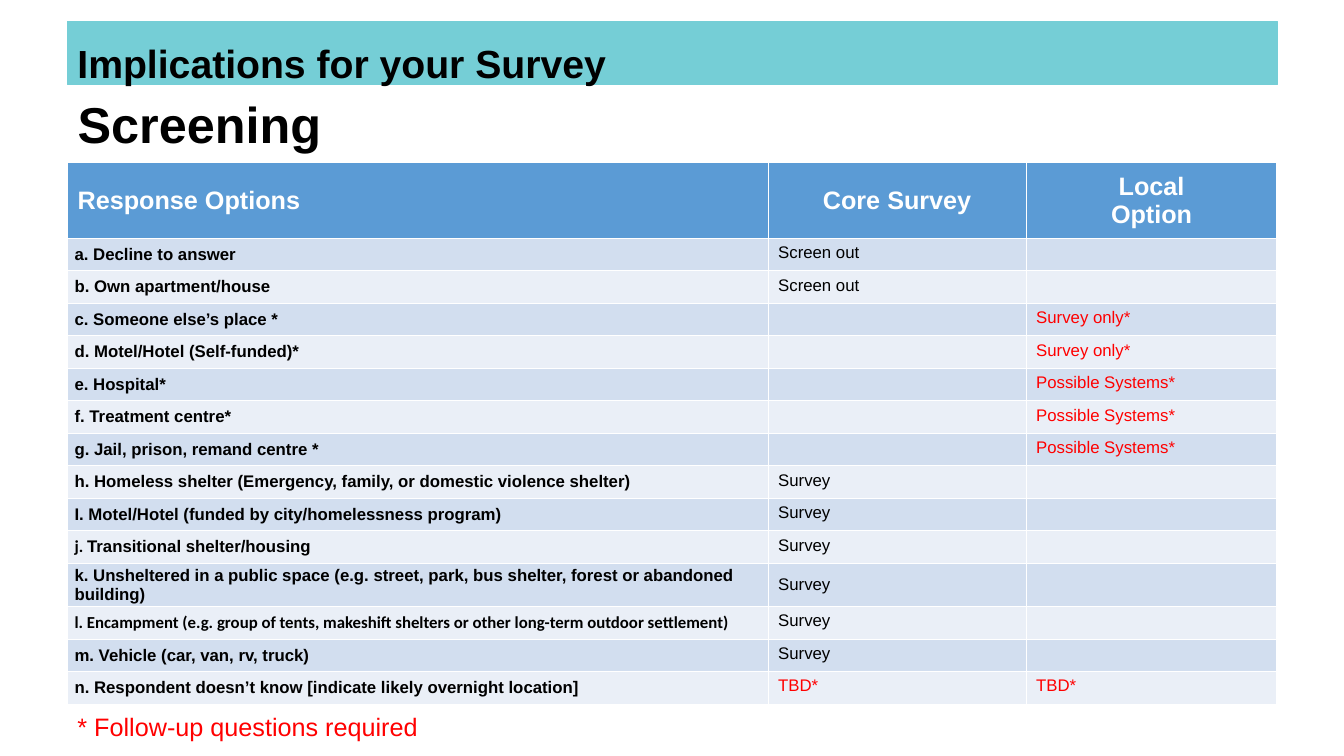
"""Build the survey screening slide with its table of response options."""
from typing import NamedTuple

import pptx
import pptx.dml.color
import pptx.enum.shapes
import pptx.enum.text
import pptx.util
from lxml import etree

Pt = pptx.util.Pt
RGBColor = pptx.dml.color.RGBColor
ALIGN = pptx.enum.text.PP_ALIGN
ANCHOR = pptx.enum.text.MSO_ANCHOR

BLACK = RGBColor(0x00, 0x00, 0x00)
WHITE = RGBColor(0xFF, 0xFF, 0xFF)
RED = RGBColor(0xFF, 0x00, 0x00)
TEAL = RGBColor(0x75, 0xCE, 0xD6)
HEADER_BLUE = RGBColor(0x5B, 0x9B, 0xD5)
BANDS = (RGBColor(0xD2, 0xDE, 0xEF), RGBColor(0xEA, 0xEF, 0xF7))

LEFT, WIDTH = 48.24, 864
COLUMN_WIDTHS = (500.4, 184.32, 179.28)
HEADER_HEIGHT, ROW_HEIGHT, TALL_HEIGHT = 54, 23.22, 31
DRAWING_NS = "http://schemas.openxmlformats.org/drawingml/2006/main"


class Response(NamedTuple):
    label: str
    core: str = ""
    local: str = ""
    lead: str = ""
    tall: bool = False


RESPONSES = (
    Response("a. Decline to answer", "Screen out"),
    Response("b. Own apartment/house", "Screen out"),
    Response("c. Someone else’s place *", local="Survey only*"),
    Response("d. Motel/Hotel (Self-funded)*", local="Survey only*"),
    Response("e. Hospital*", local="Possible Systems*"),
    Response("f. Treatment centre*", local="Possible Systems*"),
    Response("g. Jail, prison, remand centre *", local="Possible Systems*"),
    Response("h. Homeless shelter (Emergency, family, or domestic violence shelter)", "Survey"),
    Response("I. Motel/Hotel (funded by city/homelessness program)", "Survey"),
    Response("Transitional shelter/housing", "Survey", lead="j. "),
    Response("k. Unsheltered in a public space (e.g. street, park, bus shelter, "
             "forest or abandoned building)", "Survey", tall=True),
    Response("", "Survey", lead="l. Encampment (e.g. group of tents, makeshift shelters "
             "or other long-term outdoor settlement)"),
    Response("m. Vehicle (car, van, rv, truck)", "Survey"),
    Response("n. Respondent doesn’t know [indicate likely overnight location]", "TBD*", "TBD*"),
)


def add_text(p, text: str, *, size: float = 12, color: RGBColor = BLACK,
             bold: bool = False, font: str = "Arial", align=ALIGN.LEFT) -> None:
    """Append a formatted run, or size the paragraph when there is no text."""
    p.alignment = align
    if not text:
        end = etree.SubElement(p._p, f"{{{DRAWING_NS}}}endParaRPr")
        end.set("sz", str(int(size * 100)))
        return
    r = p.add_run()
    r.text = text
    r.font.size = Pt(size)
    r.font.name = font
    r.font.bold = bold
    r.font.color.rgb = color


def fill_cell(cell, color: RGBColor, anchor=ANCHOR.TOP) -> None:
    """Give a table cell its fill and vertical anchor."""
    cell.fill.solid()
    cell.fill.fore_color.rgb = color
    cell.vertical_anchor = anchor


def add_title(slide) -> None:
    """Place the slide title."""
    sp = slide.shapes.title
    sp.left, sp.top, sp.width, sp.height = Pt(LEFT), Pt(60.48), Pt(756), Pt(55.44)
    tf = sp.text_frame
    tf.auto_size = pptx.enum.text.MSO_AUTO_SIZE.NONE
    tf.vertical_anchor = ANCHOR.MIDDLE
    add_text(tf.paragraphs[0], "Screening", size=36, bold=True)


def add_header(table) -> None:
    """Write the column headings."""
    headings = (("Response Options",), ("Core Survey",), ("Local", "Option"))
    for i, lines in enumerate(headings):
        cell = table.cell(0, i)
        fill_cell(cell, HEADER_BLUE, ANCHOR.MIDDLE)
        tf = cell.text_frame
        for j, line in enumerate(lines):
            p = tf.add_paragraph() if j else tf.paragraphs[0]
            add_text(p, line, size=18, color=WHITE, bold=True,
                     align=ALIGN.CENTER if i else ALIGN.LEFT)


def add_response(table, row: int, response: Response) -> None:
    """Write one response option and its outcomes."""
    band = BANDS[(row - 1) % 2]
    table.rows[row].height = Pt(TALL_HEIGHT if response.tall else ROW_HEIGHT)
    cell = table.cell(row, 0)
    fill_cell(cell, band, ANCHOR.MIDDLE)
    cell.margin_left = cell.margin_right = Pt(5)
    cell.margin_top = cell.margin_bottom = Pt(0)
    p = cell.text_frame.paragraphs[0]
    for text, font in ((response.lead, "Calibri"), (response.label, "Arial")):
        if text:
            add_text(p, text, bold=True, font=font)
    for column, text in enumerate((response.core, response.local), start=1):
        cell = table.cell(row, column)
        fill_cell(cell, band, ANCHOR.MIDDLE if response.tall else ANCHOR.TOP)
        add_text(cell.text_frame.paragraphs[0], text,
                 color=RED if text.endswith("*") else BLACK)


def add_options_table(slide) -> None:
    """Add the table of response options."""
    table = slide.shapes.add_table(len(RESPONSES) + 1, len(COLUMN_WIDTHS), Pt(LEFT),
                                   Pt(116.2), Pt(WIDTH), Pt(387.36)).table
    for column, width in zip(table.columns, COLUMN_WIDTHS):
        column.width = Pt(width)
    table.rows[0].height = Pt(HEADER_HEIGHT)
    add_header(table)
    for row, response in enumerate(RESPONSES, start=1):
        add_response(table, row, response)


def add_banner(slide) -> None:
    """Add the coloured heading bar."""
    sp = slide.shapes.add_shape(pptx.enum.shapes.MSO_SHAPE.RECTANGLE,
                                Pt(LEFT), Pt(15.12), Pt(WIDTH), Pt(45.36))
    sp.shadow.inherit = False
    sp.fill.solid()
    sp.fill.fore_color.rgb = TEAL
    sp.line.color.rgb = TEAL
    sp.line.width = Pt(0.75)
    tf = sp.text_frame
    tf.word_wrap = True
    tf.vertical_anchor = ANCHOR.TOP
    p = tf.paragraphs[0]
    p.line_spacing = Pt(43.2)
    add_text(p, "Implications for your Survey", size=28, bold=True)


def add_note(slide) -> None:
    """Add the note under the table."""
    sp = slide.shapes.add_textbox(Pt(LEFT), Pt(504.72), Pt(498.24), Pt(28.8))
    tf = sp.text_frame
    tf.word_wrap = True
    add_text(tf.paragraphs[0], "* Follow-up questions required", size=18, color=RED)


def main() -> None:
    """Build and save the presentation."""
    prs = pptx.Presentation()
    prs.slide_width, prs.slide_height = Pt(960), Pt(540)
    slide = prs.slides.add_slide(prs.slide_layouts[5])
    add_title(slide)
    add_options_table(slide)
    add_banner(slide)
    add_note(slide)
    prs.save("out.pptx")


if __name__ == "__main__":
    main()
